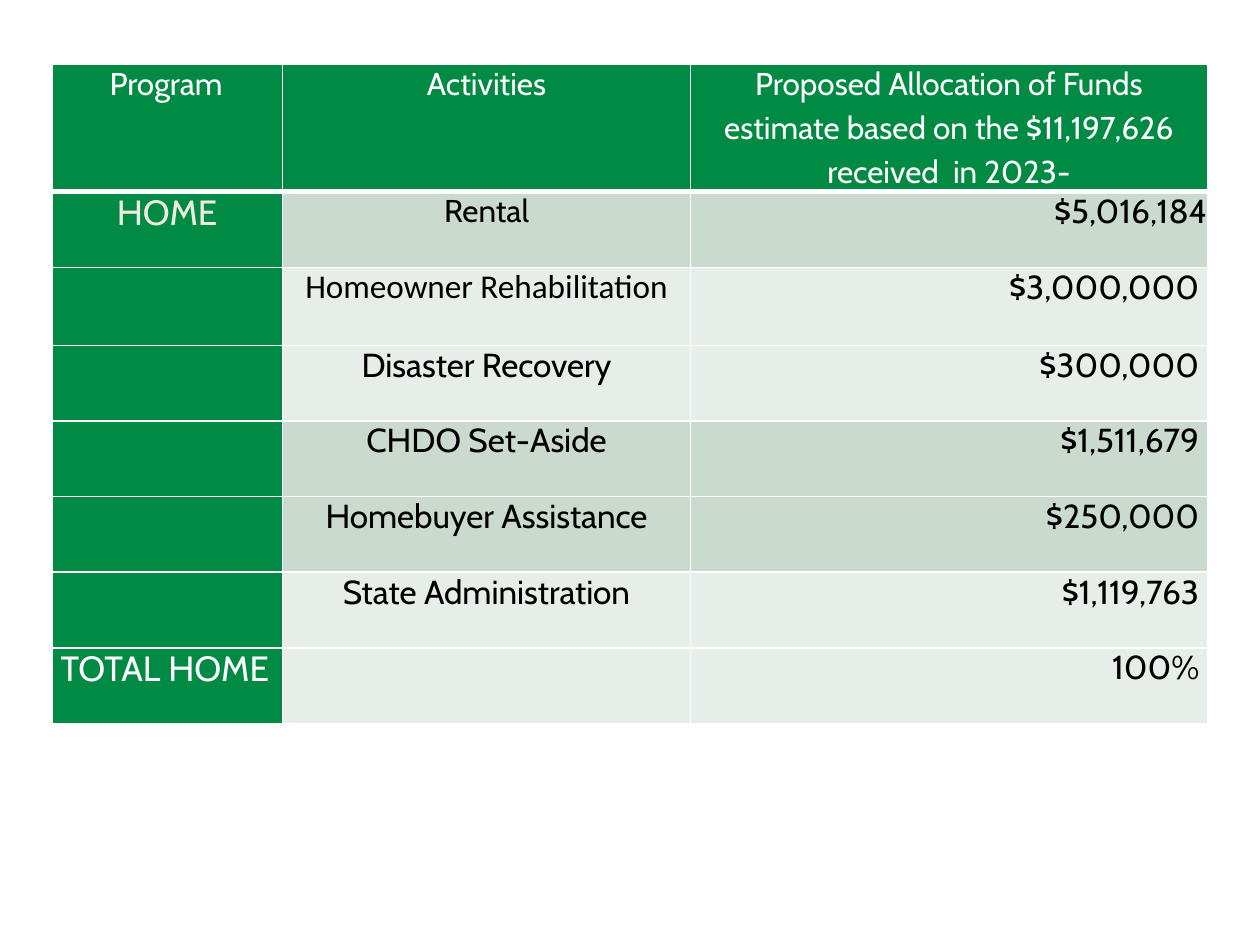
from lxml import etree
from pptx import Presentation
from pptx.dml.color import RGBColor
from pptx.enum.text import PP_ALIGN
from pptx.oxml.ns import qn
from pptx.util import Pt

LEFT, CENTER, RIGHT = PP_ALIGN.LEFT, PP_ALIGN.CENTER, PP_ALIGN.RIGHT
GREEN, SAGE, PALE = "008A43", "CBDACF", "E7EDE9"
WHITE, CREAM, BLACK = "FFFFFF", "EEECE1", "000000"


def rgb(value):
    return RGBColor.from_string(value)


def add_border(cell, side, width):
    ln = etree.SubElement(cell._tc.get_or_add_tcPr(), qn(f"a:ln{side}"), w=str(Pt(width)))
    fill = etree.SubElement(ln, qn("a:solidFill"))
    etree.SubElement(fill, qn("a:srgbClr"), val=WHITE)


prs = Presentation()
prs.slide_width, prs.slide_height = Pt(720), Pt(540)
s = prs.slides.add_slide(prs.slide_layouts[6])

# Rows of program, activity and allocation
rows = [
    ("Program", "Activities",
     "Proposed Allocation of Funds\nestimate based on the $11,197,626 received  in 2023-"),
    ("HOME", "Rental", "$5,016,184"),
    ("", "Homeowner Rehabilitation", "$3,000,000"),
    ("", "Disaster Recovery", "$300,000"),
    ("", "CHDO Set-Aside", "$1,511,679"),
    ("", "Homebuyer Assistance", "$250,000"),
    ("", "State Administration", "$1,119,763"),
    ("TOTAL HOME", "", "100%"),
]
row_fills = [GREEN, SAGE, PALE, PALE, SAGE, SAGE, PALE, PALE]
col_widths = [131.8, 233.3, 295.2]
row_heights = [72.7, 43.2, 44.6] + [43.2] * 5

# Formats: one per column, then the cells that differ
header = {"size": 18, "color": WHITE, "align": CENTER}
columns = [
    {"size": 20, "color": WHITE, "align": LEFT},
    {"size": 19, "color": BLACK, "align": CENTER},
    {"size": 19, "color": BLACK, "align": RIGHT, "right": 4.7},
]
special = {
    (0, 0): {"align": LEFT, "left": 33},
    (1, 0): {"color": CREAM, "align": CENTER},
    (1, 1): {"size": 18},
    (1, 2): {"right": 0},
    (2, 1): {"font": "Calibri"},
    (7, 0): {"left": 5},
}

# Table
frame = s.shapes.add_table(len(rows), len(col_widths), Pt(29.6), Pt(36.9),
                           Pt(sum(col_widths)), Pt(sum(row_heights)))
table = frame.table
for col, width in zip(table.columns, col_widths):
    col.width = Pt(width)
for row, height in zip(table.rows, row_heights):
    row.height = Pt(height)

for i, texts in enumerate(rows):
    for j, text in enumerate(texts):
        cell = table.cell(i, j)
        base = header if i == 0 else columns[j]
        fmt = {"font": "Cabin", "left": 0, "right": 0, **base, **special.get((i, j), {})}

        # Margins, borders and fill
        for side in ("left", "right", "top", "bottom"):
            setattr(cell, f"margin_{side}", Pt(fmt.get(side, 0)))
        widths = {"L": 1, "R": 1, "T": 3 if i == 1 else 1, "B": 3 if i == 0 else 1}
        for side, width in widths.items():
            add_border(cell, side, width)
        cell.fill.solid()
        cell.fill.fore_color.rgb = rgb(GREEN if j == 0 else row_fills[i])

        # Text
        cell.text = text
        for n, p in enumerate(cell.text_frame.paragraphs):
            p.alignment = fmt["align"]
            if n:
                p.line_spacing = 1.15
            for r in p.runs:
                for name, value in {"name": fmt["font"], "size": Pt(fmt["size"]),
                                    "bold": False}.items():
                    setattr(r.font, name, value)
                r.font.color.rgb = rgb(fmt["color"])

prs.save("out.pptx")
